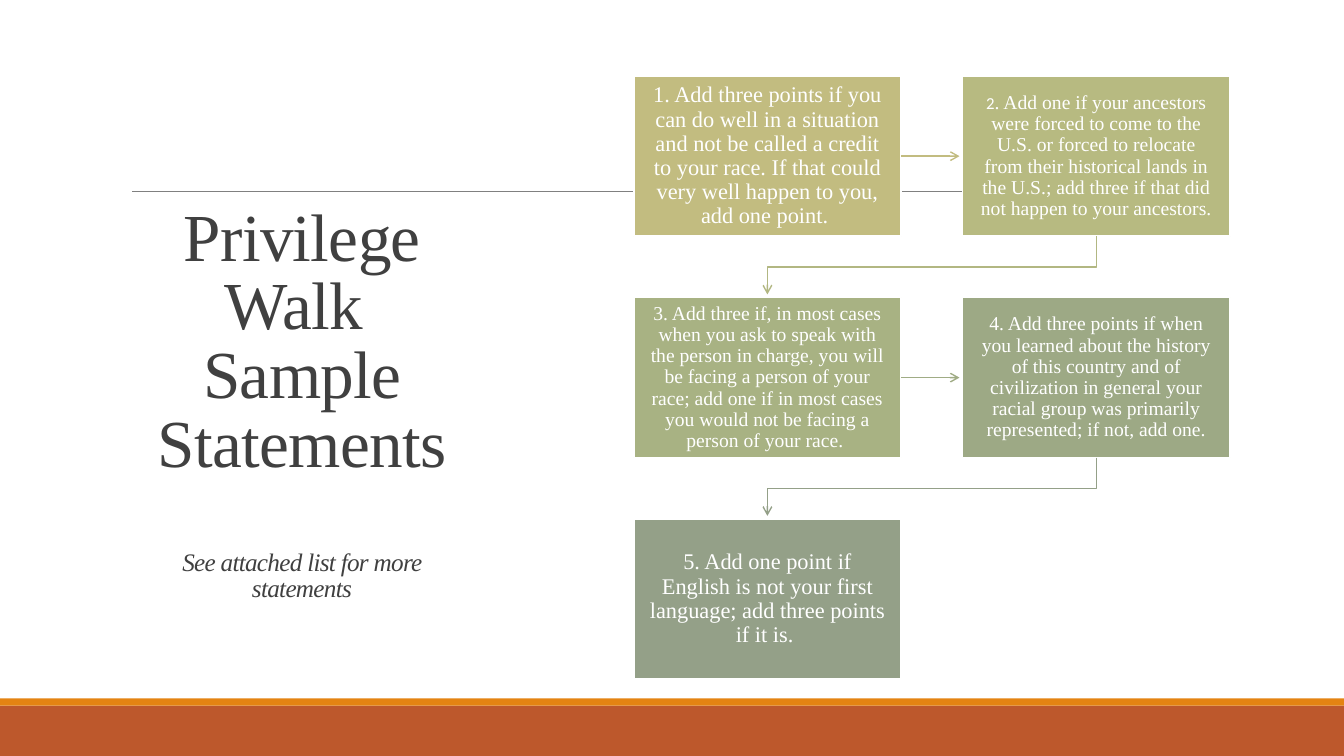
import pptx
import pptx.util
import pptx.dml.color
import pptx.enum.shapes
import pptx.enum.text
import pptx.oxml.ns
from dataclasses import dataclass
from lxml import etree

Cm, Pt = pptx.util.Cm, pptx.util.Pt
RGB = pptx.dml.color.RGBColor.from_string
ALIGN = pptx.enum.text.PP_ALIGN
ANCHOR = pptx.enum.text.MSO_ANCHOR
RECTANGLE = pptx.enum.shapes.MSO_SHAPE.RECTANGLE
STRAIGHT = pptx.enum.shapes.MSO_CONNECTOR.STRAIGHT

HEADING = "Privilege Walk \vSample Statements"
NOTE = "See attached list for more statements"
STATEMENTS = [
    [("1. Add three points if you can do well in a situation and not be called a credit "
      "to your race. If that could very well happen to you, add one point. ", "large")],
    [("2", "number"),
     (". Add one if your ancestors were forced to come to the U.S. or forced to relocate "
      "from their historical lands in the U.S.; add three if that did not happen to your "
      "ancestors.", "medium")],
    [("3. Add three if, in most cases when you ask to speak with the person in charge, you "
      "will be facing a person of your race; add one if in most cases you would not be "
      "facing a person of your race. ", "medium")],
    [("4. Add three points if when you learned about the history of this country and of "
      "civilization in general your racial group was primarily represented; if not, add "
      "one.", "medium")],
    [("5. Add one point if English is not your first language; add three points if it is. ",
      "large")],
]


@dataclass(frozen=True)
class Theme:
    serif: str = "Times New Roman"
    sans: str = "Calibri"
    ink: str = "404040"
    white: str = "FFFFFF"
    rule: str = "808080"
    footer: str = "BD582C"
    accent: str = "E48312"
    boxes: tuple = ("C2BC80", "B7BA81", "A8B283", "9DA985", "94A088")
    arrows: tuple = ("C2BC80", "B2B782", "A0AC85", "94A088")
    heading: int = 48
    note: int = 18
    large: int = 16
    medium: int = 14
    number: int = 12


THEME = Theme()
COLUMNS = 2
GRID_LEFT, GRID_TOP = 15.97, 1.92
COLUMN_STEP, ROW_STEP = 8.29, 5.58
BOX_WIDTH, BOX_HEIGHT = 6.74, 4.03
ARROW_GAP = 0.08


def style_run(run, font, size, color):
    run.font.name = font
    run.font.size = Pt(size)
    run.font.color.rgb = RGB(color)


def style_line(line, color, width):
    line.color.rgb = RGB(color)
    line.width = Pt(width)


def add_block(slide, left, top, width, height, color):
    block = slide.shapes.add_shape(RECTANGLE, Cm(left), Cm(top), Cm(width), Cm(height))
    block.shadow.inherit = False
    block.fill.solid()
    block.fill.fore_color.rgb = RGB(color)
    block.line.fill.background()
    return block


def add_straight(slide, start, end, color, width):
    straight = slide.shapes.add_connector(STRAIGHT, *map(Cm, start + end))
    style_line(straight.line, color, width)
    etree.SubElement(straight.line._get_or_add_ln().getparent(),
                     pptx.oxml.ns.qn("a:effectLst"))
    return straight


def add_arrowhead(line):
    etree.SubElement(line._get_or_add_ln(), pptx.oxml.ns.qn("a:tailEnd"), type="arrow")


def fill_title(title):
    title.left, title.top, title.width, title.height = map(Cm, (3.18, 5.11, 8.86, 10.16))
    frame = title.text_frame
    frame.text = HEADING + "\n" + NOTE
    frame.word_wrap = True
    frame.auto_size = pptx.enum.text.MSO_AUTO_SIZE.NONE
    frame.vertical_anchor = ANCHOR.MIDDLE
    for paragraph, size in zip(frame.paragraphs, (THEME.heading, THEME.note)):
        paragraph.alignment = ALIGN.CENTER
        paragraph.line_spacing = 0.85
        paragraph.space_before = Pt(0)
        for run in paragraph.runs:
            style_run(run, THEME.serif, size, THEME.ink)
            run.font.italic = size == THEME.note
            run.font._element.set("spc", "-50")
    frame.paragraphs[1].space_before = Pt(50)


def box_corner(index):
    row, column = divmod(index, COLUMNS)
    return GRID_LEFT + column * COLUMN_STEP, GRID_TOP + row * ROW_STEP


def add_statement(slide, index, pieces):
    box = add_block(slide, *box_corner(index), BOX_WIDTH, BOX_HEIGHT, THEME.boxes[index])
    style_line(box.line, THEME.white, 1.25)
    frame = box.text_frame
    frame.word_wrap = True
    frame.vertical_anchor = ANCHOR.MIDDLE
    frame.margin_left = frame.margin_right = Cm(0.33)
    frame.margin_top = frame.margin_bottom = Cm(0.36)
    paragraph = frame.paragraphs[0]
    paragraph.alignment = ALIGN.CENTER
    paragraph.line_spacing = 0.9
    for words, role in pieces:
        run = paragraph.add_run()
        run.text = words
        font = THEME.sans if role == "number" else THEME.serif
        style_run(run, font, getattr(THEME, role), THEME.white)
    return box


def add_arrow(slide, index, source):
    left, top = box_corner(index)
    next_left, next_top = box_corner(index + 1)
    if next_top == top:
        middle = top + BOX_HEIGHT / 2
        arrow = add_straight(slide, (left + BOX_WIDTH, middle),
                             (next_left - ARROW_GAP, middle), THEME.arrows[index], 1)
        arrow.begin_connect(source, 3)
    else:
        start_x, end_x = left + BOX_WIDTH / 2, next_left + BOX_WIDTH / 2
        bottom = top + BOX_HEIGHT
        bend = (bottom + next_top) / 2
        corners = [(start_x, bend), (end_x, bend), (end_x, next_top - ARROW_GAP)]
        builder = slide.shapes.build_freeform(Cm(start_x), Cm(bottom))
        builder.add_line_segments([(Cm(x), Cm(y)) for x, y in corners], close=False)
        arrow = builder.convert_to_shape()
        arrow.shadow.inherit = False
        arrow.fill.background()
        style_line(arrow.line, THEME.arrows[index], 1)
    add_arrowhead(arrow.line)


def main():
    deck = pptx.Presentation()
    deck.slide_width, deck.slide_height = Cm(33.87), Cm(19.05)
    slide = deck.slides.add_slide(deck.slide_layouts.get_by_name("Title Only"))
    fill_title(slide.shapes.title)
    add_block(slide, 0, 17.78, 33.87, 1.27, THEME.footer)
    add_block(slide, 0, 17.6, 33.87, 0.18, THEME.accent)
    add_straight(slide, (3.33, 4.83), (31.01, 4.83), THEME.rule, 0.5)
    boxes = [add_statement(slide, i, pieces) for i, pieces in enumerate(STATEMENTS)]
    for i, source in enumerate(boxes[:-1]):
        add_arrow(slide, i, source)
    deck.save("out.pptx")


if __name__ == "__main__":
    main()
